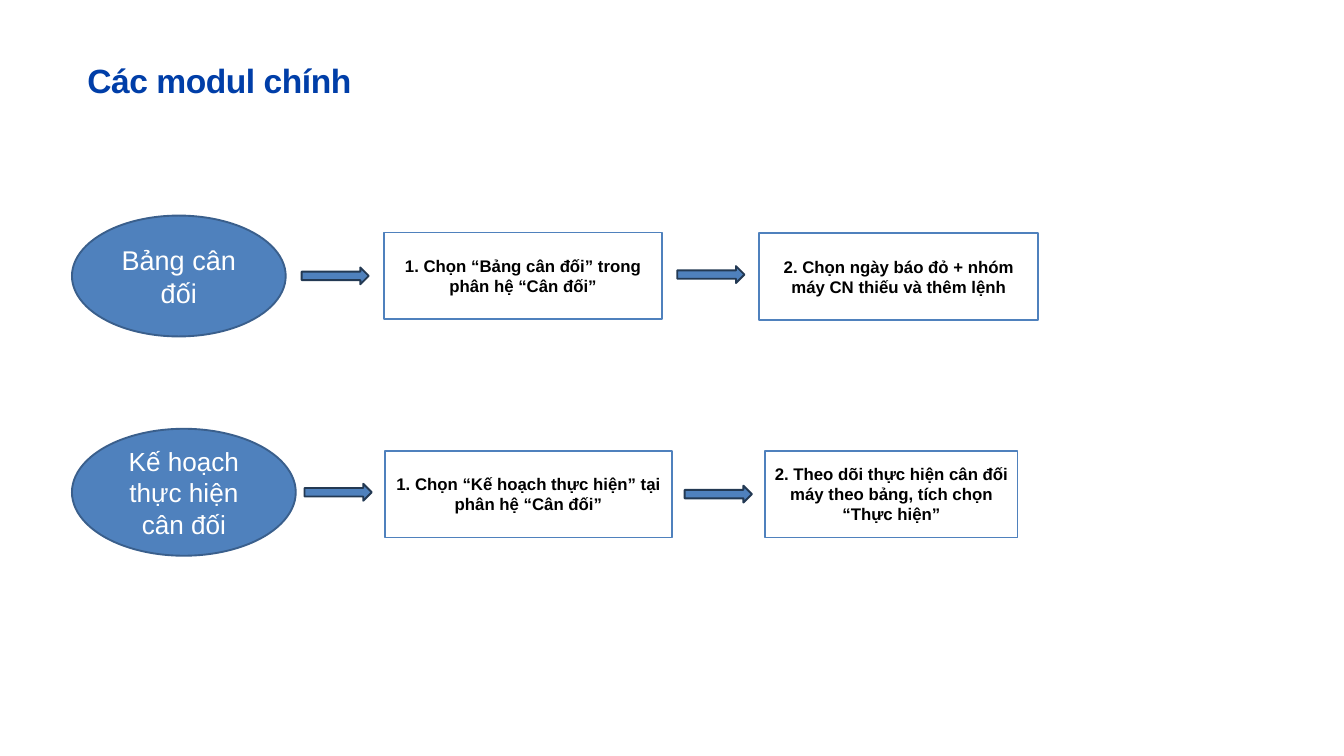
from pptx import Presentation
from pptx.dml.color import RGBColor
from pptx.enum.shapes import MSO_SHAPE
from pptx.enum.text import MSO_ANCHOR, PP_ALIGN
from pptx.util import Cm, Pt

ELLIPSE, RECT, ARROW = MSO_SHAPE.OVAL, MSO_SHAPE.RECTANGLE, MSO_SHAPE.RIGHT_ARROW
MIDDLE, CENTER = MSO_ANCHOR.MIDDLE, PP_ALIGN.CENTER

NAVY = RGBColor(0x00, 0x3E, 0xA8)
BLUE = RGBColor(0x4F, 0x81, 0xBD)
ELLIPSE_LINE = RGBColor(0x3A, 0x5F, 0x8C)
ARROW_LINE = RGBColor(0x23, 0x39, 0x53)
WHITE = RGBColor(0xFF, 0xFF, 0xFF)
BLACK = RGBColor(0x00, 0x00, 0x00)

BOX_H = 3.28
ARROW_W, ARROW_H = 2.54, 0.64


def add_run(p, text, size, color, bold=False):
    r = p.add_run()
    r.text = text
    r.font.name = "Arial"
    r.font.size = Pt(size)
    r.font.bold = bold
    r.font.color.rgb = color
    return r


def add_node(kind, x, y, w, h, fill, line):
    s = slide.shapes.add_shape(kind, Cm(x), Cm(y), Cm(w), Cm(h))
    s.shadow.inherit = False
    s.fill.solid()
    s.fill.fore_color.rgb = fill
    s.line.color.rgb = line
    s.line.width = Pt(2)
    tf = s.text_frame
    tf.word_wrap = True
    tf.vertical_anchor = MIDDLE
    p = tf.paragraphs[0]
    p.alignment = CENTER
    return p


prs = Presentation()
prs.slide_width, prs.slide_height = Cm(50.8), Cm(28.58)
slide = prs.slides.add_slide(prs.slide_layouts[6])

# Title
s = slide.shapes.add_textbox(Cm(3.3), Cm(2.24), Cm(18.72), Cm(1.47))
tf = s.text_frame
tf.word_wrap = True
tf.margin_left = tf.margin_right = tf.margin_top = tf.margin_bottom = 0
p = tf.paragraphs[0]
p.line_spacing = Pt(43.5)
r = add_run(p, "Các modul chính", 36, NAVY, True)
r.font._element.set("spc", "-50")

# Flows: module (text, size, y, w, h), steps (text, x, y, w), arrows (x, y)
flows = [
    (("Bảng cân đối", 29, 8.15, 8.08, 4.57),
     [("1. Chọn “Bảng cân đối” trong phân hệ “Cân đối”", 14.5, 8.79, 10.54),
      ("2. Chọn ngày báo đỏ + nhóm máy CN thiếu và thêm lệnh", 28.7, 8.81, 10.54)],
     [(11.4, 10.11), (25.6, 10.06)]),
    (("Kế hoạch thực hiện cân đối", 28, 16.21, 8.46, 4.8),
     [("1. Chọn “Kế hoạch thực hiện” tại phân hệ “Cân đối”", 14.55, 17.04, 10.85),
      ("2. Theo dõi thực hiện cân đối máy theo bảng, tích chọn “Thực hiện”",
       28.93, 17.04, 9.53)],
     [(11.51, 18.29), (25.88, 18.36)]),
]

for (module, size, y, w, h), steps, arrows in flows:
    # Module ellipse
    p = add_node(ELLIPSE, 2.72, y, w, h, BLUE, ELLIPSE_LINE)
    add_run(p, module, size, WHITE)
    # Step boxes
    for text, x, y, w in steps:
        p = add_node(RECT, x, y, w, BOX_H, WHITE, BLUE)
        add_run(p, text, 18, BLACK, True)
    # Arrows between them
    for x, y in arrows:
        add_node(ARROW, x, y, ARROW_W, ARROW_H, BLUE, ARROW_LINE)

prs.save("out.pptx")
